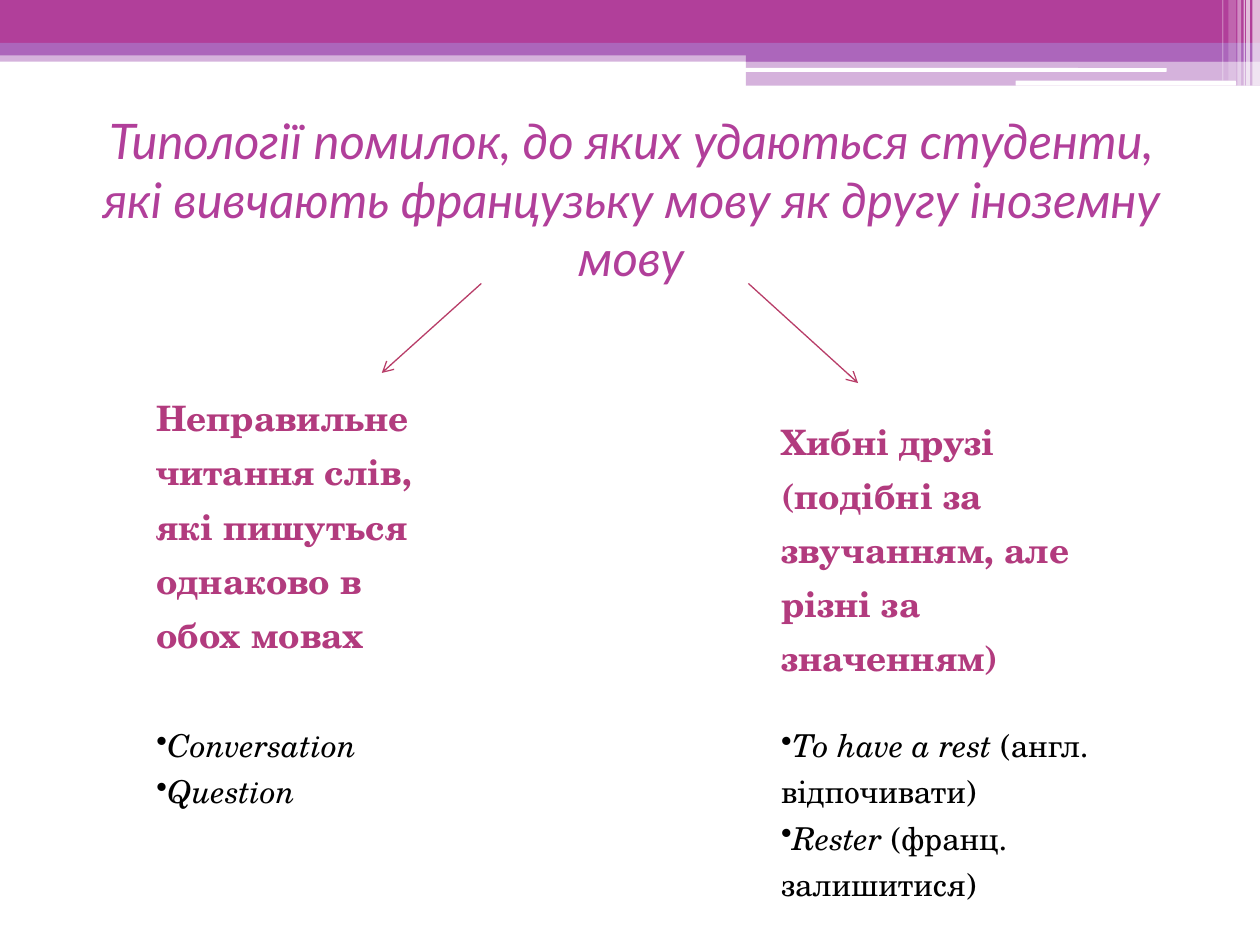
from lxml import etree
from pptx import Presentation
from pptx.dml.color import RGBColor
from pptx.enum.shapes import MSO_CONNECTOR, MSO_SHAPE
from pptx.enum.text import MSO_ANCHOR, MSO_AUTO_SIZE, PP_ALIGN
from pptx.oxml.ns import qn
from pptx.util import Emu, Pt

RECTANGLE, ROUNDED = MSO_SHAPE.RECTANGLE, MSO_SHAPE.ROUNDED_RECTANGLE
STRAIGHT = MSO_CONNECTOR.STRAIGHT
TOP, MIDDLE = MSO_ANCHOR.TOP, MSO_ANCHOR.MIDDLE
CENTER, NO_FIT = PP_ALIGN.CENTER, MSO_AUTO_SIZE.NONE
PX_PER_INCH = 100
TITLE_FONT, BODY_FONT = "Lato", "TeX Gyre Schola"
COLORS = {
    "magenta": "B13F9A",
    "violet": "AC66BB",
    "heading": "B23B7E",
    "arrow": "B83D68",
    "white": "FFFFFF",
    "black": "000000",
}


def px(length):
    return Emu(length * 914400 // PX_PER_INCH)


def color(name):
    return RGBColor.from_string(COLORS[name])


def add_bar(page, left, top, width, height, fill, opacity=100, kind=RECTANGLE):
    bar = page.shapes.add_shape(kind, px(left), px(top), px(width), px(height))
    bar.shadow.inherit = False
    bar.line.fill.background()
    bar.fill.solid()
    bar.fill.fore_color.rgb = color(fill)
    if opacity < 100:
        tint = bar.fill._xPr.find(qn("a:solidFill"))[0]
        etree.SubElement(tint, qn("a:alpha")).set("val", str(opacity * 1000))


def add_text(para, text, font=BODY_FONT, size=18, fill="black", bold=False, italic=False):
    span = para.add_run()
    span.text = text
    span.font.name = font
    span.font.size = Pt(size)
    span.font.color.rgb = color(fill)
    span.font.bold = bold
    span.font.italic = italic


def add_bullet(para):
    """Put a bullet directly against the text, with no hanging indent."""
    properties = para._p.get_or_add_pPr()
    properties.set("marL", "0")
    properties.set("indent", "0")
    etree.SubElement(properties, qn("a:buChar")).set("char", "•")


def add_banner(page):
    add_bar(page, 0, 40, 1000, 9, "violet", 50)
    add_bar(page, 0, 0, 1000, 34, "magenta")
    add_bar(page, 0, 34, 1000, 10, "violet")
    add_bar(page, 592, 39, 408, 10, "violet")
    add_bar(page, 592, 48, 408, 20, "violet", 50)
    add_bar(page, 591, 54, 335, 3, "white", kind=ROUNDED)
    add_bar(page, 806, 64, 175, 4, "white", kind=ROUNDED)
    stripes = [
        (994, 6, 68, 65), (989, 3, 68, 65), (987, 1, 68, 60),
        (982, 3, 68, 40), (975, 6, 64, 20), (970, 1, 64, 30),
    ]
    for left, width, height, opacity in stripes:
        add_bar(page, left, 0, width, height, "white", opacity)


def set_title(page, text):
    title = page.shapes.title
    title.left, title.top, title.width, title.height = px(51), px(99), px(900), px(117)
    frame = title.text_frame
    frame.word_wrap = True
    frame.auto_size = NO_FIT
    frame.vertical_anchor = MIDDLE
    para = frame.paragraphs[0]
    para.alignment = CENTER
    add_text(para, text, font=TITLE_FONT, size=28, fill="magenta", italic=True)


def fill_heading(cell, text):
    cell.vertical_anchor = MIDDLE
    add_text(cell.text_frame.paragraphs[0], text, size=20, fill="heading", bold=True)


def fill_examples(cell, examples):
    """Write one bullet for each pair of italic phrase and upright gloss."""
    cell.vertical_anchor = TOP
    frame = cell.text_frame
    for index, (phrase, gloss) in enumerate(examples):
        para = frame.add_paragraph() if index else frame.paragraphs[0]
        add_bullet(para)
        add_text(para, phrase, italic=True)
        if gloss:
            add_text(para, gloss)


def add_error_table(page, columns):
    widths, heights = (253, 243, 276), (264, 141)
    frame = page.shapes.add_table(
        len(heights), len(widths), px(114), px(304), px(sum(widths)), px(sum(heights)))
    table = frame.table
    table.first_row = table.horz_banding = False
    for column, width in zip(table.columns, widths):
        column.width = px(width)
    for row, height in zip(table.rows, heights):
        row.height = px(height)
    for cell in table.iter_cells():
        cell.fill.solid()
        cell.fill.fore_color.rgb = color("white")
    for index, (heading, examples) in columns.items():
        fill_heading(table.cell(0, index), heading)
        fill_examples(table.cell(1, index), examples)
    table.cell(0, 0).margin_bottom = px(42)


def add_arrow(page, start, end):
    arrow = page.shapes.add_connector(STRAIGHT, *map(px, start + end))
    arrow.line.color.rgb = color("arrow")
    arrow.line.width = Pt(0.75)
    etree.SubElement(arrow.line._get_or_add_ln(), qn("a:tailEnd")).set("type", "arrow")
    etree.SubElement(arrow._element.spPr, qn("a:effectLst"))


def main():
    deck = Presentation()
    deck.slide_width, deck.slide_height = px(1000), px(750)
    page = deck.slides.add_slide(deck.slide_layouts.get_by_name("Title Only"))
    add_banner(page)
    set_title(page, "Типології помилок, до яких удаються студенти, "
                    "які вивчають французьку мову як другу іноземну мову")
    add_error_table(page, {
        0: ("Неправильне читання слів, які пишуться однаково в обох мовах",
            [("Conversation", ""), ("Question", "")]),
        2: ("Хибні друзі (подібні за звучанням, але різні за значенням)",
            [("To have a rest ", "(англ. відпочивати)"),
             ("Rester", " (франц. залишитися)")]),
    })
    add_arrow(page, (594, 225), (681, 304))
    add_arrow(page, (382, 225), (303, 296))
    deck.save("out.pptx")


if __name__ == "__main__":
    main()
